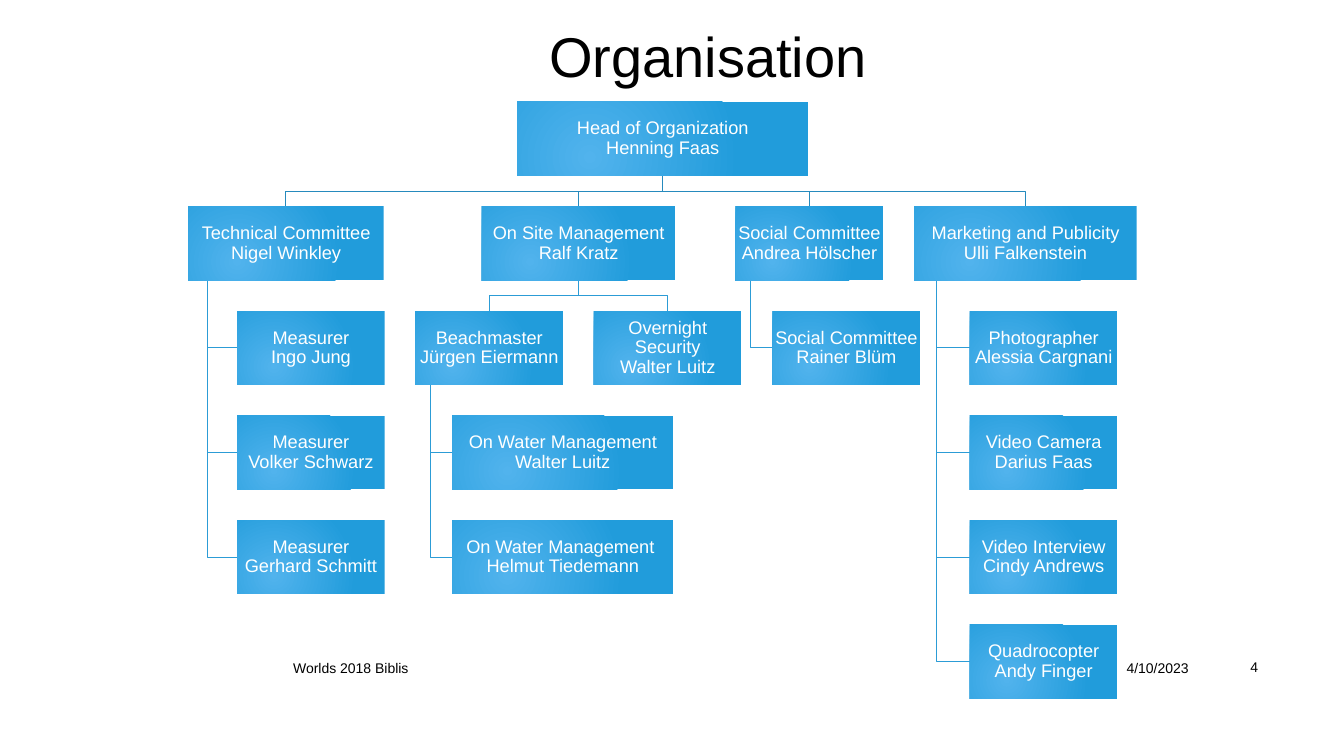
from dataclasses import dataclass

from lxml.etree import SubElement
from pptx import Presentation
from pptx.dml.color import RGBColor
from pptx.enum.shapes import MSO_SHAPE
from pptx.enum.text import MSO_ANCHOR, PP_ALIGN
from pptx.oxml.ns import qn
from pptx.util import Pt

BLACK = RGBColor(0x00, 0x00, 0x00)
WHITE = RGBColor(0xFF, 0xFF, 0xFF)
LIGHT_BLUE = RGBColor(0x51, 0xB3, 0xED)
DEEP_BLUE = RGBColor(0x21, 0x9C, 0xDB)
TOP_LINE = RGBColor(0x26, 0x8A, 0xBD)
LOWER_LINE = RGBColor(0x2C, 0x9C, 0xD6)

FONT = "Arial"
BOX_HEIGHT = 52.7
ROW_PITCH = 74.7
NARROW = 105.3


@dataclass
class Post:
    role: str
    person: str
    left: float
    width: float = NARROW
    reports: tuple = ()
    hanging: bool = True  # reports stacked below, or side by side


CHART = Post("Head of Organization", "Henning Faas", 369.4, 207.8, hanging=False, reports=(
    Post("Technical Committee", "Nigel Winkley", 134.5, 139.6, (
        Post("Measurer", "Ingo Jung", 169.4),
        Post("Measurer", "Volker Schwarz", 169.4),
        Post("Measurer", "Gerhard Schmitt", 169.4))),
    Post("On Site Management", "Ralf Kratz", 344.3, 138, hanging=False, reports=(
        Post("Beachmaster", "Jürgen Eiermann", 296.8, NARROW, (
            Post("On Water Management", "Walter Luitz", 323.1, 157.7),
            Post("On Water Management ", "Helmut Tiedemann", 323.1, 157.7))),
        Post("Overnight Security", "Walter Luitz", 424.3))),
    Post("Social Committee", "Andrea Hölscher", 525.5, NARROW, (
        Post("Social Committee", "Rainer Blüm", 551.9),)),
    Post("Marketing and Publicity", "Ulli Falkenstein", 653, 159, (
        Post("Photographer", "Alessia Cargnani", 692.8),
        Post("Video Camera", "Darius Faas", 692.8),
        Post("Video Interview", "Cindy Andrews", 692.8),
        Post("Quadrocopter", "Andy Finger", 692.8))),
))


def add_span(para, text, size, color):
    span = para.add_run()
    span.text = text
    span.font.name = FONT
    span.font.size = Pt(size)
    span.font.color.rgb = color


def add_label(page, text, left, top, width, height, size, align):
    box = page.shapes.add_textbox(Pt(left), Pt(top), Pt(width), Pt(height))
    frame = box.text_frame
    frame.word_wrap = True
    frame.vertical_anchor = MSO_ANCHOR.MIDDLE
    para = frame.paragraphs[0]
    para.alignment = align
    add_span(para, text, size, BLACK)


def fill_with_glow(box):
    box.fill.gradient()
    for stop, color in zip(box.fill.gradient_stops, (LIGHT_BLUE, DEEP_BLUE)):
        stop.color.rgb = color
    gradient = box.element.spPr.find(qn("a:gradFill"))
    gradient.remove(gradient.find(qn("a:lin")))
    circle = SubElement(gradient, qn("a:path"), {"path": "circle"})
    SubElement(circle, qn("a:fillToRect"),
               {"l": "50000", "t": "100000", "r": "100000", "b": "50000"})


def add_post(page, post, top):
    box = page.shapes.add_shape(
        MSO_SHAPE.RECTANGLE, Pt(post.left), Pt(top), Pt(post.width), Pt(BOX_HEIGHT))
    box.shadow.inherit = False
    box.line.fill.background()
    fill_with_glow(box)
    frame = box.text_frame
    frame.word_wrap = True
    frame.vertical_anchor = MSO_ANCHOR.MIDDLE
    frame.margin_left = frame.margin_right = Pt(0.7)
    frame.margin_top = frame.margin_bottom = Pt(0.7)
    para = frame.paragraphs[0]
    para.alignment = PP_ALIGN.CENTER
    para.line_spacing = 0.9
    add_span(para, post.role, 13, WHITE)
    para.add_line_break()
    add_span(para, post.person, 13, WHITE)


def add_link(page, points, color):
    start, *rest = [(Pt(x), Pt(y)) for x, y in points]
    builder = page.shapes.build_freeform(*start)
    builder.add_line_segments(rest, close=False)
    link = builder.convert_to_shape()
    link.shadow.inherit = False
    link.fill.background()
    link.line.color.rgb = color
    link.line.width = Pt(0.75)


def place_reports(post, top):
    """Pair each direct report with the top of its box."""
    return [(report, top + ROW_PITCH * (1 + (index if post.hanging else 0)))
            for index, report in enumerate(post.reports)]


def add_links(page, post, top, color):
    bottom = top + BOX_HEIGHT
    for report, report_top in place_reports(post, top):
        if post.hanging:
            trunk = post.left + post.width / 10
            middle = report_top + BOX_HEIGHT / 2
            points = [(trunk, bottom), (trunk, middle), (report.left, middle)]
        else:
            start = post.left + post.width / 2
            end = report.left + report.width / 2
            bend = (bottom + report_top) / 2
            points = [(start, bottom), (start, bend), (end, bend), (end, report_top)]
        add_link(page, points, color)
        add_links(page, report, report_top, LOWER_LINE)


def add_posts(page, post, top):
    add_post(page, post, top)
    for report, report_top in place_reports(post, top):
        add_posts(page, report, report_top)


def add_title(page):
    add_label(page, "Organisation ", 116.6, 8.6, 789.1, 61.9, 40, PP_ALIGN.CENTER)


def add_footer(page, top):
    add_label(page, "4/10/2023", 766.1, top, 90, 28.8, 10, PP_ALIGN.RIGHT)
    add_label(page, "Worlds 2018 Biblis", 202.3, top, 558, 28.8, 10, PP_ALIGN.LEFT)
    add_label(page, "4", 862.6, top - 0.8, 43.2, 28.8, 10, PP_ALIGN.RIGHT)


def add_organisation_chart(page, top):
    # Links lie behind the boxes
    add_links(page, CHART, top, TOP_LINE)
    add_posts(page, CHART, top)


def main():
    deck = Presentation()
    deck.slide_width, deck.slide_height = Pt(960), Pt(540)
    page = deck.slides.add_slide(deck.slide_layouts[6])
    add_title(page)
    add_footer(page, 463)
    add_organisation_chart(page, 72.8)
    deck.save("out.pptx")


if __name__ == "__main__":
    main()
